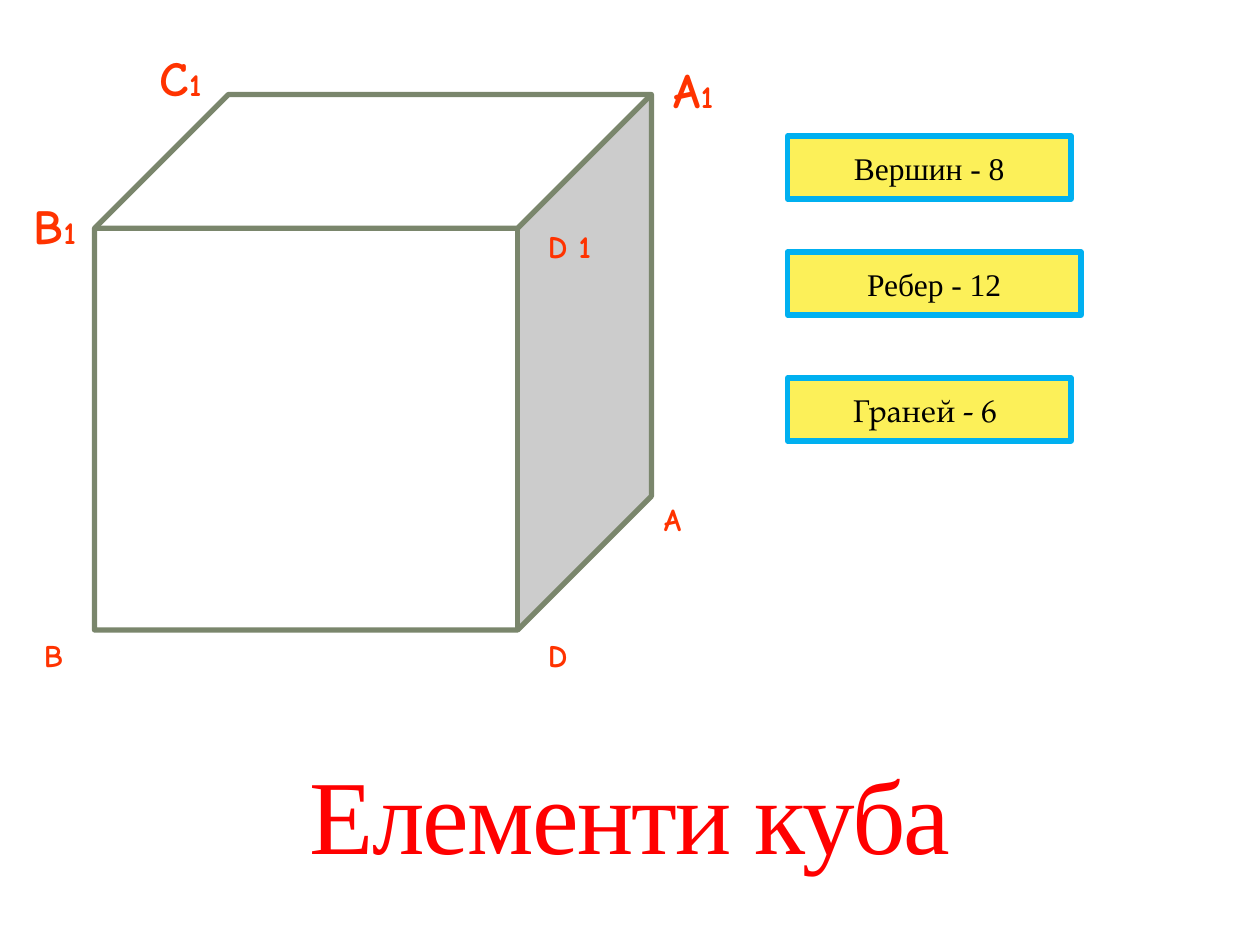
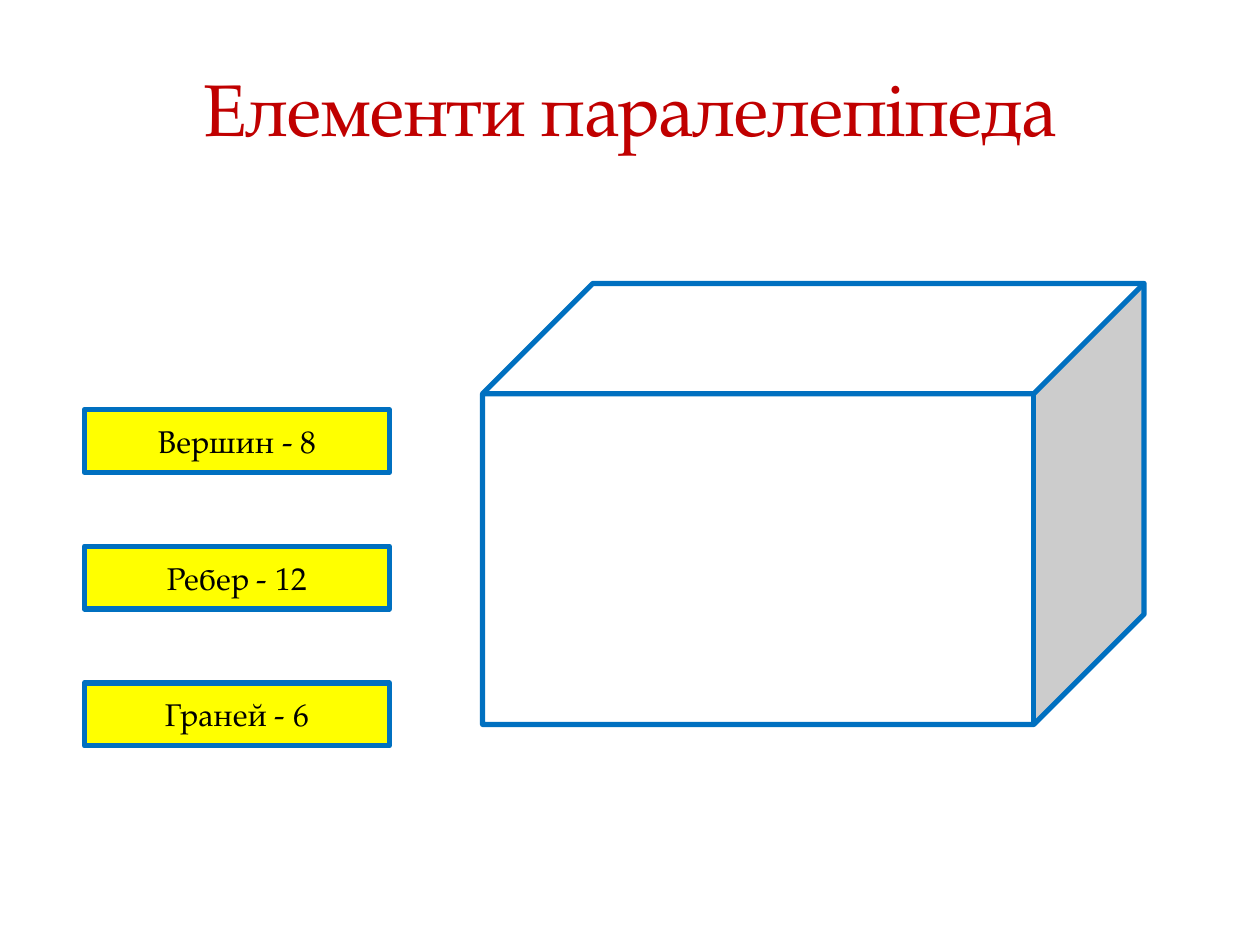
from pptx import Presentation
from pptx.dml.color import RGBColor
from pptx.enum.shapes import MSO_SHAPE as Shape
from pptx.enum.text import MSO_ANCHOR as Anchor, MSO_AUTO_SIZE as AutoSize, PP_ALIGN as Align
from pptx.util import Inches, Pt

SERIF = "Times New Roman"
PAGELLA = "TeX Gyre Pagella"
COMIC = "Comic Neue"
WHITE, BLACK, RED, DARK_RED, ORANGE = "FFFFFF", "000000", "FF0000", "C00000", "FF3300"
OLIVE, SKY, BLUE, PALE_YELLOW, YELLOW = "7A866C", "00B0F0", "0070C0", "FCF059", "FFFF00"
LINE_WIDTH = 3
BOX_HEIGHT = 0.5

CUBE_BOXES = [
    ("Вершин - 8", SERIF, 1.08, 2.25),
    ("Ребер - 12", SERIF, 2, 2.33),
    ("Граней - 6 ", PAGELLA, 3, 2.25),
]
VERTICES = [
    (5.17, 3.92, 0.5, [("A", 18)]),
    (5.25, 0.42, 0.67, [("A", 28), ("1", 18)]),
    (4.25, 1.75, 0.67, [("D 1", 18)]),
    (0.25, 5, 0.33, [("B", 18)]),
    (4.25, 5, 0.5, [("D", 18)]),
    (0.17, 1.5, 0.67, [("B", 28), ("1", 18)]),
    (1.17, 0.33, 0.6, [("C", 28), ("1", 18)]),
]
PRISM_COUNTS = ["Вершин - 8", "Ребер - 12", "Граней - 6"]


def color(value):
    """Turn a hex string into a colour."""
    return RGBColor.from_string(value)


def add_run(paragraph, text, size, font, ink, bold=False):
    """Add one formatted run to a paragraph."""
    run = paragraph.add_run()
    run.text = text
    run.font.size = Pt(size)
    run.font.name = font
    run.font.bold = bold
    run.font.color.rgb = color(ink)
    return run


def add_titled_slide(presentation, text, height, size, font, ink):
    """Add a slide whose title sits at the bottom of its placeholder."""
    slide = presentation.slides.add_slide(presentation.slide_layouts[5])
    title = slide.shapes.title
    title.left, title.top = Inches(0.5), Inches(0.17)
    title.width, title.height = Inches(9), Inches(height)
    frame = title.text_frame
    frame.auto_size = AutoSize.NONE
    frame.vertical_anchor = Anchor.BOTTOM
    paragraph = frame.paragraphs[0]
    paragraph.alignment = Align.CENTER
    run = add_run(paragraph, text, size, font, ink)
    run.font._element.set("spc", "-100")
    return slide


def add_solid(slide, kind, left, top, width, height, fill, line):
    """Add a filled and outlined preset shape."""
    shape = slide.shapes.add_shape(
        kind, Inches(left), Inches(top), Inches(width), Inches(height))
    shape.shadow.inherit = False
    shape.fill.solid()
    shape.fill.fore_color.rgb = color(fill)
    shape.line.color.rgb = color(line)
    shape.line.width = Pt(LINE_WIDTH)
    return shape


def add_count_box(slide, text, font, left, top, width, fill, line):
    """Add a box that names a kind of element and its count."""
    shape = add_solid(slide, Shape.RECTANGLE, left, top, width, BOX_HEIGHT, fill, line)
    shape.text_frame.vertical_anchor = Anchor.MIDDLE
    paragraph = shape.text_frame.paragraphs[0]
    paragraph.alignment = Align.CENTER
    add_run(paragraph, text, 18, font, BLACK)


def add_vertex_label(slide, left, top, width, parts):
    """Add the letter of a vertex, with its index if it has one."""
    height = 0.57 if len(parts) > 1 else 0.4
    label = slide.shapes.add_textbox(
        Inches(left), Inches(top), Inches(width), Inches(height))
    frame = label.text_frame
    frame.word_wrap = True
    frame.auto_size = AutoSize.SHAPE_TO_FIT_TEXT
    for text, size in parts:
        add_run(frame.paragraphs[0], text, size, COMIC, ORANGE, bold=True)


def build_cube_slide(presentation):
    """Build the slide on the elements of a cube."""
    slide = add_titled_slide(presentation, "Елементи куба", 6.83, 60, SERIF, RED)
    add_solid(slide, Shape.CUBE, 0.75, 0.75, 4.42, 4.25, WHITE, OLIVE)
    for text, font, top, width in CUBE_BOXES:
        add_count_box(slide, text, font, 6.25, top, width, PALE_YELLOW, SKY)
    for left, top, width, parts in VERTICES:
        add_vertex_label(slide, left, top, width, parts)


def build_prism_slide(presentation):
    """Build the slide on the elements of a parallelepiped."""
    slide = add_titled_slide(
        presentation, "Елементи паралелепіпеда", 1.08, 42, PAGELLA, DARK_RED)
    for index, text in enumerate(PRISM_COUNTS):
        top = 3.25 + index * 1.085
        add_count_box(slide, text, PAGELLA, 0.67, top, 2.42, YELLOW, BLUE)
    add_solid(slide, Shape.CUBE, 3.83, 2.25, 5.25, 3.5, WHITE, BLUE)


def main():
    """Build and save the presentation."""
    presentation = Presentation()
    presentation.slide_width = Inches(10)
    presentation.slide_height = Inches(7.5)
    build_cube_slide(presentation)
    build_prism_slide(presentation)
    presentation.save("out.pptx")


if __name__ == "__main__":
    main()
